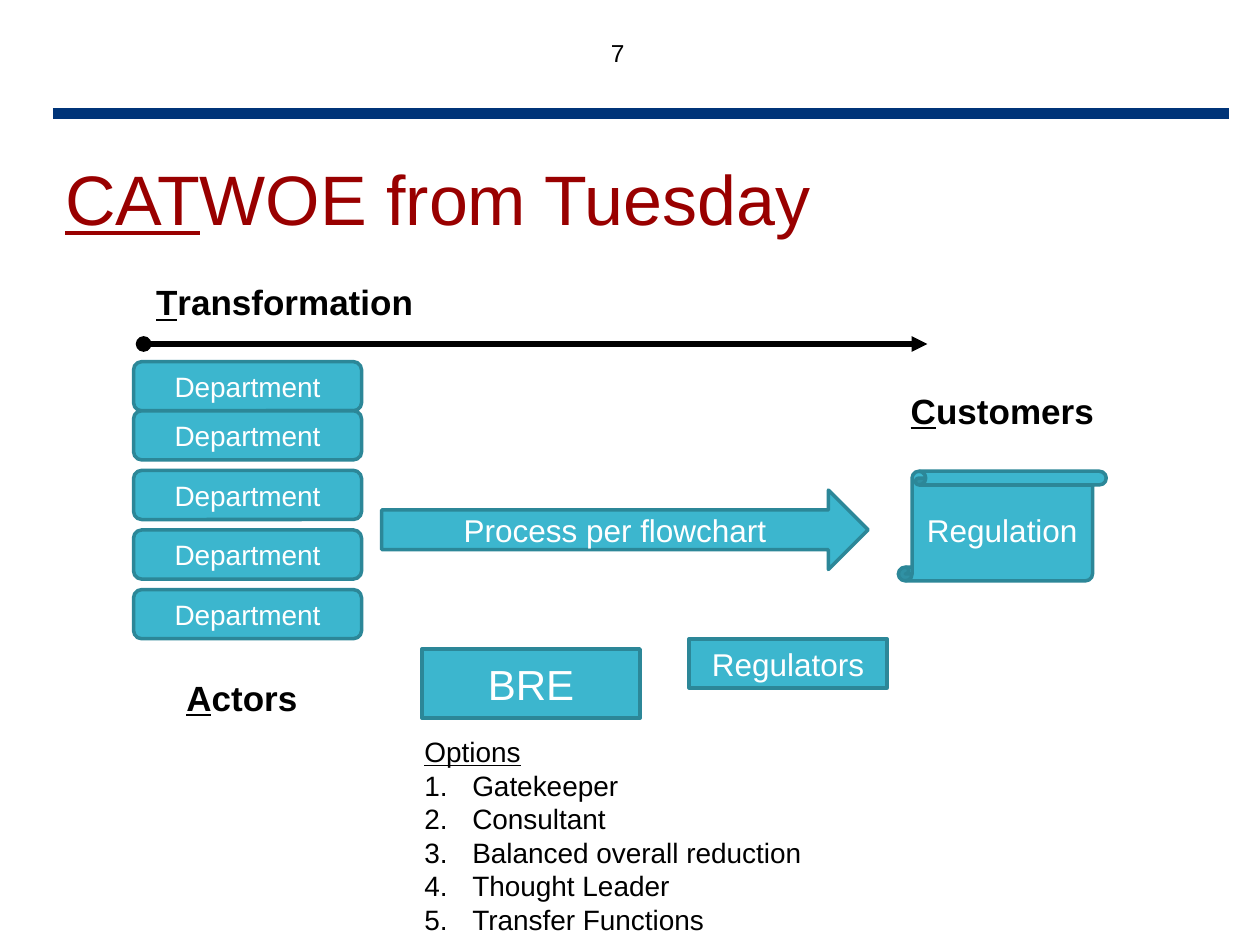
from lxml import etree
from pptx import Presentation
from pptx.dml.color import RGBColor
from pptx.enum.shapes import MSO_CONNECTOR, MSO_SHAPE
from pptx.enum.text import MSO_ANCHOR, PP_ALIGN
from pptx.oxml.ns import qn
from pptx.util import Inches, Pt

LINE = MSO_CONNECTOR.STRAIGHT
ROUND, RECT = MSO_SHAPE.ROUNDED_RECTANGLE, MSO_SHAPE.RECTANGLE
ARROW, SCROLL = MSO_SHAPE.RIGHT_ARROW, MSO_SHAPE.VERTICAL_SCROLL
MID, TOP, CENTER = MSO_ANCHOR.MIDDLE, MSO_ANCHOR.TOP, PP_ALIGN.CENTER

COLS, ROWS = 100, 75
CELL = Inches(0.1)
HEX = {"navy": "003478", "red": "990000", "teal": "3CB6CE", "edge": "2C8798",
       "black": "000000", "white": "FFFFFF"}
OPTIONS = ["Gatekeeper", "Consultant", "Balanced overall reduction",
           "Thought Leader", "Transfer Functions"]


def tint(name):
    """Return a named colour."""
    return RGBColor.from_string(HEX[name])


def cells(*sizes):
    """Turn grid cells into lengths."""
    return [round(size * CELL) for size in sizes]


def sub(box, x, y, w, h):
    """Place a part relative to the corner of a box."""
    return box[0] + x, box[1] + y, w, h


def write(para, text, size, color="black", **form):
    """Add a run with its format."""
    font = para.add_run().font
    para.runs[-1].text = text
    for key, value in {"name": "Arial", "size": Pt(size), **form}.items():
        setattr(font, key, value)
    font.color.rgb = tint(color)


def label(slide, box, lead, rest, size=20, color="black", anchor=TOP, bold=True):
    """Add a text box with an underlined lead."""
    frame = slide.shapes.add_textbox(*cells(*box)).text_frame
    frame.word_wrap, frame.vertical_anchor = True, anchor
    if lead:
        write(frame.paragraphs[0], lead, size, color, bold=bold, underline=True)
    if rest:
        write(frame.paragraphs[0], rest, size, color, bold=bold)
    return frame


def node(slide, kind, box, text, size):
    """Add a teal shape with centred text."""
    shape = slide.shapes.add_shape(kind, *cells(*box))
    shape.shadow.inherit = False
    shape.fill.solid()
    shape.fill.fore_color.rgb = tint("teal")
    shape.line.color.rgb, shape.line.width = tint("edge"), Pt(2)
    frame = shape.text_frame
    form = {"word_wrap": True, "vertical_anchor": MID, "margin_left": 0,
            "margin_right": 0, "margin_top": 0, "margin_bottom": 0}
    for key, value in form.items():
        setattr(frame, key, value)
    frame.paragraphs[0].alignment = CENTER
    write(frame.paragraphs[0], text, size, "white")


def rule(slide, x, y, w, color, width, ends=()):
    """Draw a level line with optional ends."""
    line = slide.shapes.add_connector(LINE, *cells(x, y, x + w, y))
    line.line.color.rgb, line.line.width = tint(color), Pt(width)
    props = line._element.spPr
    for tag, kind in ends:
        etree.SubElement(props.find(qn("a:ln")), qn(tag), type=kind)
    etree.SubElement(props, qn("a:effectLst"))


def header(slide, box):
    """Place the page number, rule and title."""
    rule(slide, box[0], box[1] + 7.3, 93.3, "navy", 6)
    label(slide, sub(box, 43.3, 0, 7.5, 5), "", "7", 14, anchor=MID, bold=False)
    label(slide, sub(box, 0, 7.7, 91.7, 12.5), "CAT", "WOE from Tuesday",
          40, "red", MID, False)


def change(slide, box):
    """Place the transformation label and arrow."""
    label(slide, sub(box, 0, 0, 27.6, 4.4), "T", "ransformation")
    rule(slide, box[0], box[1] + 5.5, box[2], "black", 3,
         [("a:headEnd", "oval"), ("a:tailEnd", "triangle")])


def actors(slide, box):
    """Stack the departments over their label."""
    for top in [0] + [3.9 + 4.73 * i for i in range(4)]:
        node(slide, ROUND, sub(box, 0, top, box[2], 3.9), "Department", 16)
    label(slide, sub(box, 3.2, 24.5, 16.5, 4.4), "A", "ctors")


def process(slide, box):
    """Place the flow arrow and the bodies below it."""
    node(slide, ARROW, sub(box, 0, 0, box[2], 6.3), "Process per flowchart", 18)
    node(slide, RECT, sub(box, 3.2, 12.6, 17.3, 5.5), "BRE", 24)
    node(slide, RECT, sub(box, 24.4, 11.8, 15.7, 3.9), "Regulators", 18)


def choices(slide, box):
    """List the numbered options."""
    frame = label(slide, box, "Options", "", 16, bold=False)
    for text in OPTIONS:
        para = frame.add_paragraph()
        props = para._p.get_or_add_pPr()
        props.set("marL", str(Inches(0.38)))
        props.set("indent", str(-Inches(0.38)))
        etree.SubElement(props, qn("a:buAutoNum"), type="arabicPeriod")
        write(para, text, 16)


def clients(slide, box):
    """Place the customers label over the regulation scroll."""
    label(slide, sub(box, 0, 0, box[2], 4.4), "C", "ustomers")
    node(slide, SCROLL, sub(box, 0, 7, 16.5, 8.7), "Regulation", 18)


def main():
    """Build and save the slide."""
    deck = Presentation()
    deck.slide_width, deck.slide_height = cells(COLS, ROWS)
    slide = deck.slides.add_slide(deck.slide_layouts[6])
    header(slide, (4.2, 1.7, 93.3, 20.2))
    actors(slide, (10.6, 28.7, 18.1, 28.9))
    process(slide, (30.3, 38.9, 38.6, 18.1))
    choices(slide, (32.7, 57.8, 33.9, 17.2))
    clients(slide, (71.3, 30.4, 19.7, 15.7))
    change(slide, (11.4, 21.8, 62.2, 5.5))
    deck.save("out.pptx")


if __name__ == "__main__":
    main()
